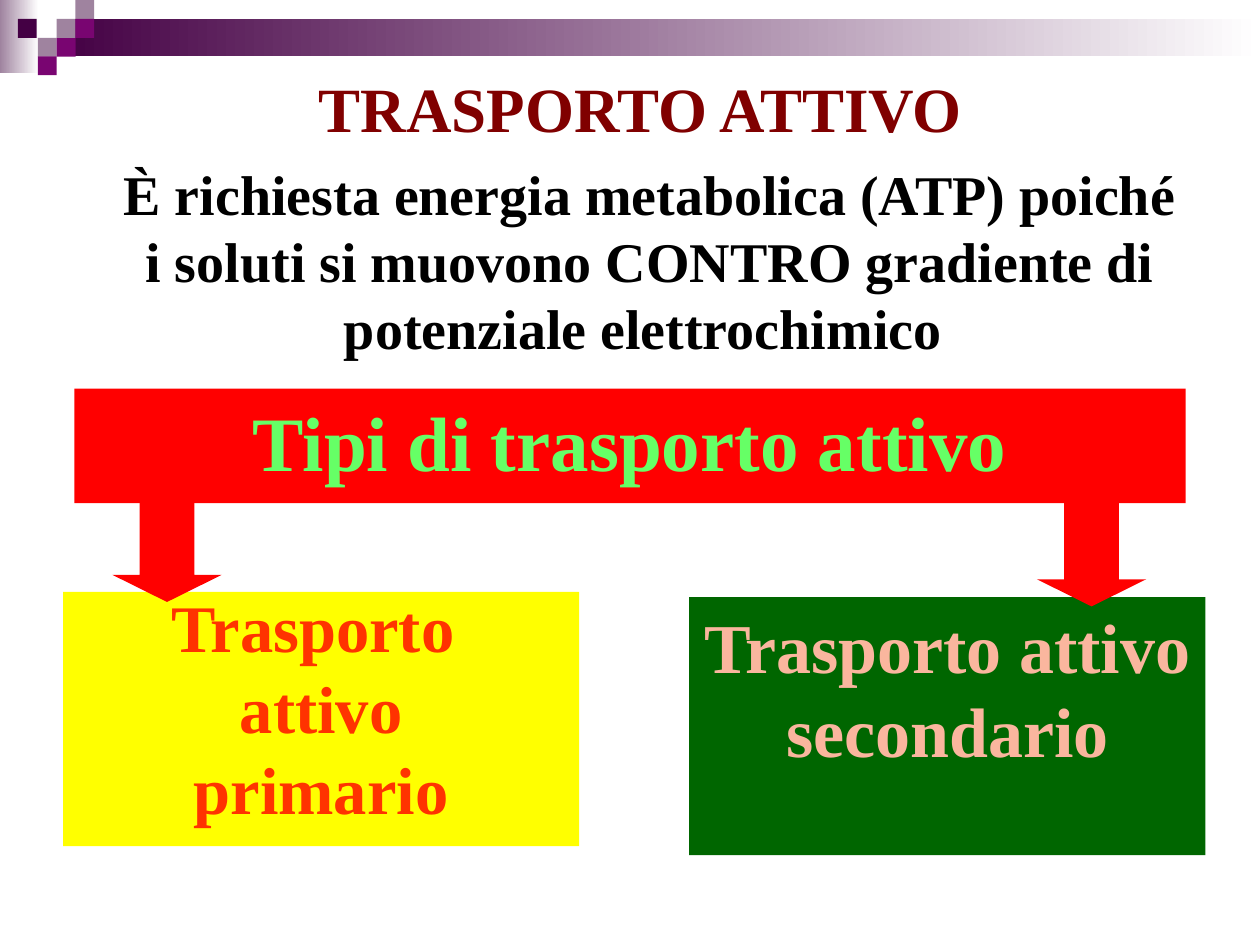
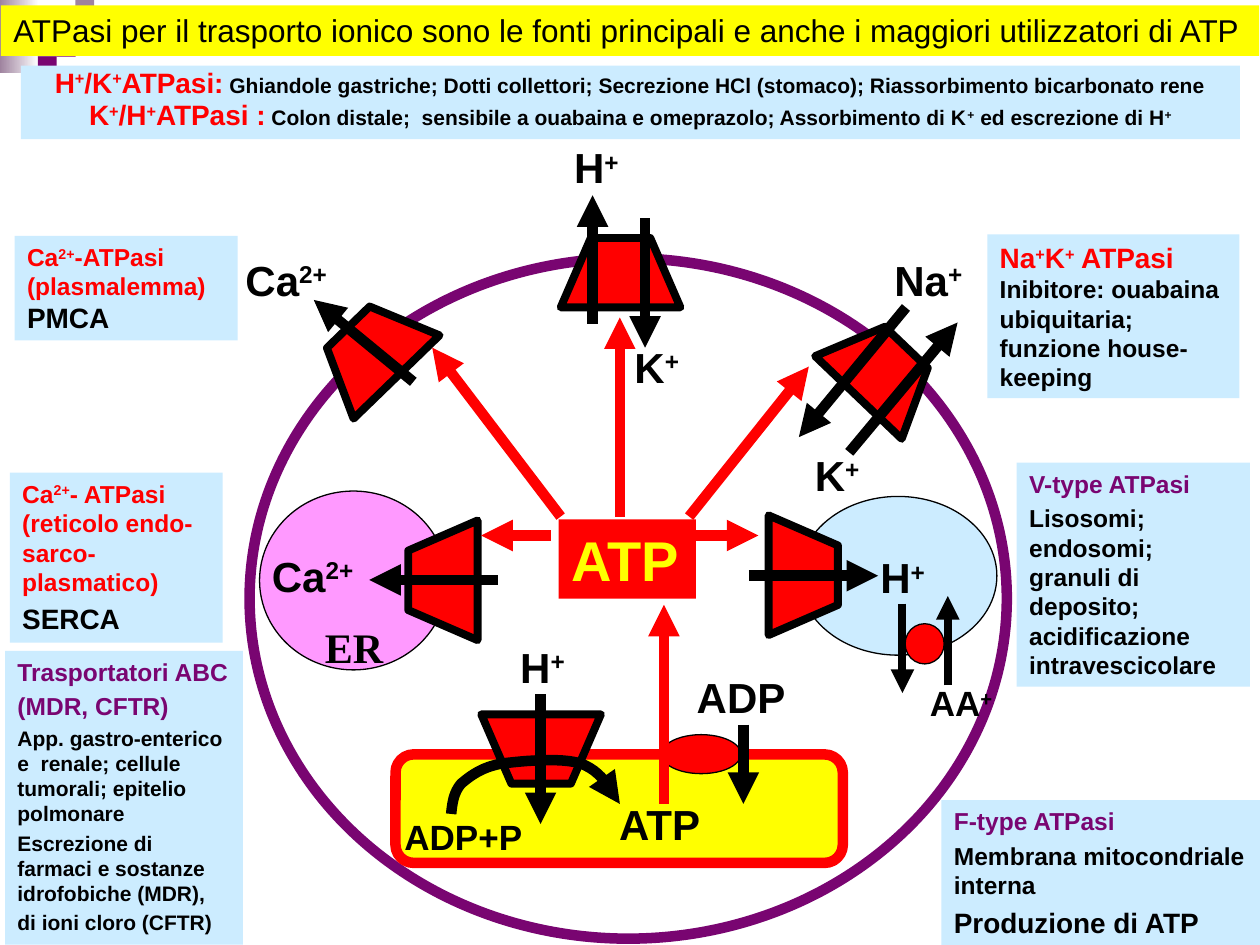
from lxml import etree
from pptx import Presentation
from pptx.dml.color import RGBColor
from pptx.enum.shapes import MSO_CONNECTOR, MSO_SHAPE
from pptx.enum.text import MSO_ANCHOR, PP_ALIGN
from pptx.oxml.ns import qn
from pptx.util import Pt

RECT, OVAL = MSO_SHAPE.RECTANGLE, MSO_SHAPE.OVAL
ROUNDED, DOWN_ARROW = MSO_SHAPE.ROUNDED_RECTANGLE, MSO_SHAPE.DOWN_ARROW
STRAIGHT = MSO_CONNECTOR.STRAIGHT
LEFT, CENTER = PP_ALIGN.LEFT, PP_ALIGN.CENTER
TOP = MSO_ANCHOR.TOP

ARIAL, TIMES = "Arial", "Times New Roman"
BLACK = RGBColor(0x00, 0x00, 0x00)
WHITE = RGBColor(0xFF, 0xFF, 0xFF)
RED = RGBColor(0xFF, 0x00, 0x00)
YELLOW = RGBColor(0xFF, 0xFF, 0x00)
PURPLE = RGBColor(0x79, 0x05, 0x71)
DARK_PURPLE = RGBColor(0x44, 0x00, 0x44)
MAUVE = RGBColor(0x9F, 0x83, 0x9F)
PALE_BLUE = RGBColor(0xCC, 0xEC, 0xFF)
PINK = RGBColor(0xFF, 0x99, 0xFF)
MAROON = RGBColor(0x80, 0x00, 0x00)
LIME = RGBColor(0x66, 0xFF, 0x66)
ORANGE = RGBColor(0xFF, 0x33, 0x00)
GREEN = RGBColor(0x00, 0x66, 0x00)
SALMON = RGBColor(0xFA, 0xB6, 0x9E)

PUMP_WIDTH, PUMP_HEIGHT, PUMP_INSET = 68.4, 39.6, 17.2


def style(shape, fill=None, line=None, weight=0.75):
    shape.shadow.inherit = False
    if fill is None:
        shape.fill.background()
    else:
        shape.fill.solid()
        shape.fill.fore_color.rgb = fill
    if line is None:
        shape.line.fill.background()
    else:
        shape.line.color.rgb = line
        shape.line.width = Pt(weight)
    return shape


def add_block(slide, kind, box, fill=None, line=None, weight=0.75):
    shape = slide.shapes.add_shape(kind, *map(Pt, box))
    return style(shape, fill, line, weight)


def add_fade(slide, box, start):
    """Band that fades from the start colour to white, left to right."""
    band = add_block(slide, RECT, box, start)
    band.fill.gradient()
    band.fill.gradient_angle = 0
    for stop, position, color in zip(band.fill.gradient_stops, (0, 1), (start, WHITE)):
        stop.position = position
        stop.color.rgb = color


def write(shape, paragraphs, font=ARIAL, bold=True, align=LEFT,
          spacing=None, before=0, wrap=True):
    """Fill a shape with paragraphs of (text, size, colour) pieces.

    Text between ^ marks is superscript; before is a share of the text size.
    """
    frame = shape.text_frame
    frame.word_wrap = wrap
    frame.vertical_anchor = TOP
    for index, pieces in enumerate(paragraphs):
        paragraph = frame.add_paragraph() if index else frame.paragraphs[0]
        paragraph.alignment = align
        paragraph.line_spacing = spacing
        paragraph.space_before = Pt(before * pieces[0][1])
        for text, size, color in pieces:
            for order, part in enumerate(text.split("^")):
                if not part:
                    continue
                run = paragraph.add_run()
                run.text = part
                run.font.name = font
                run.font.size = Pt(size)
                run.font.bold = bold
                run.font.color.rgb = color
                if order % 2:
                    run.font._element.set("baseline", "30000")


def add_label(slide, box, text, size=24, color=BLACK, **options):
    label = slide.shapes.add_textbox(*map(Pt, box))
    write(label, [[(text, size, color)]], **options)


def add_note(slide, box, paragraphs, **options):
    write(add_block(slide, RECT, box, PALE_BLUE), paragraphs, **options)


def add_arrowhead(shape):
    line = shape._element.spPr.find(qn("a:ln"))
    etree.SubElement(line, qn("a:tailEnd"), type="triangle")


def add_arrow(slide, start, end, color=BLACK, weight=6):
    arrow = slide.shapes.add_connector(STRAIGHT, *map(Pt, start + end))
    arrow.line.color.rgb = color
    arrow.line.width = Pt(weight)
    add_arrowhead(arrow)
    etree.SubElement(arrow._element.spPr, qn("a:effectLst"))


def add_outline(slide, points, close):
    start, *others = [(Pt(x), Pt(y)) for x, y in points]
    builder = slide.shapes.build_freeform(*start)
    builder.add_line_segments(others, close=close)
    return builder.convert_to_shape()


def add_pump(slide, left, top, rotation=0):
    """Trapezoid with its wide side down before rotation."""
    right, bottom = left + PUMP_WIDTH, top + PUMP_HEIGHT
    corners = [(left, bottom), (left + PUMP_INSET, top),
               (right - PUMP_INSET, top), (right, bottom)]
    pump = style(add_outline(slide, corners, True), RED, BLACK, 4.5)
    pump.rotation = rotation


def add_curved_arrow(slide, start, curves, steps=12):
    """Arrow along cubic curves, each given as two controls and an end."""
    points = [start]
    for control_1, control_2, end in curves:
        knots = (points[-1], control_1, control_2, end)
        for step in range(1, steps + 1):
            t = step / steps
            weights = ((1 - t) ** 3, 3 * t * (1 - t) ** 2, 3 * t ** 2 * (1 - t), t ** 3)
            points.append(tuple(sum(w * knot[axis] for w, knot in zip(weights, knots))
                                for axis in (0, 1)))
    add_arrowhead(style(add_outline(slide, points, False), None, BLACK, 6))


def add_decoration(slide):
    """Bands and squares that both slides share."""
    add_fade(slide, (0, 0, 22, 42), MAUVE)
    add_fade(slide, (32.4, 10.8, 687.6, 21.4), DARK_PURPLE)
    add_squares(slide, [(43, 0, MAUVE), (21.6, 21.6, MAUVE),
                        (32.4, 21.6, PURPLE), (21.6, 32.2, PURPLE)])


def add_squares(slide, squares):
    for left, top, color in squares:
        add_block(slide, RECT, (left, top, 10.8, 10.8), color)


def build_transport_types(slide):
    add_decoration(slide)
    add_squares(slide, [(32.4, 10.8, MAUVE), (43, 10.8, PURPLE), (10.2, 10.8, DARK_PURPLE)])
    add_label(slide, (59, 87.6, 625, 122),
              "È richiesta energia metabolica (ATP) poiché i soluti si muovono "
              "CONTRO gradiente di potenziale elettrochimico ",
              32, font=TIMES, align=CENTER)
    heading = add_block(slide, RECT, (42.5, 222, 635, 65.5), RED)
    write(heading, [[("Tipi di trasporto attivo", 44, LIME)]], font=TIMES, align=CENTER)

    primary = add_block(slide, RECT, (36, 338.2, 295, 145.4), YELLOW)
    write(primary, [[(word, 38, ORANGE)] for word in ("Trasporto ", "attivo", "primario")],
          font=TIMES, align=CENTER, spacing=0.85, before=0.2)
    secondary = add_block(slide, RECT, (393.8, 341.2, 295, 147.5), GREEN)
    write(secondary, [[("Trasporto attivo secondario", 40, SALMON)]],
          font=TIMES, align=CENTER, before=0.2)
    for left, top in ((64.2, 282), (592.5, 284.5)):
        arrow = add_block(slide, DOWN_ARROW, (left, top, 62.5, 62), RED)
        arrow.adjustments[0], arrow.adjustments[1] = 0.5, 0.25
    add_label(slide, (108, 36, 516, 42), "TRASPORTO ATTIVO", 36, MAROON,
              font=TIMES, align=CENTER)


def add_ion(slide, left, top, text, size=24, width=64, font=ARIAL):
    add_label(slide, (left, top, width, 36), text, size, font=font, wrap=False)


def add_atp_center(slide):
    atp = add_block(slide, RECT, (319.2, 296.8, 78.5, 45.4), RED)
    write(atp, [[("ATP", 32, YELLOW)]], wrap=False)
    add_block(slide, OVAL, (378, 419.8, 45.4, 22.3), RED, BLACK)
    add_arrow(slide, (379.4, 459.4), (379.4, 345.6), RED)
    add_ion(slide, 391, 380.2, "ADP", width=70)
    add_arrow(slide, (424.8, 414), (424.8, 459.4))
    title = add_block(slide, RECT, (0.5, 3, 719, 29), YELLOW)
    write(title, [[("ATPasi per il trasporto ionico sono le fonti principali e anche "
                    "i maggiori utilizzatori di ATP", 18, BLACK)]], bold=False, wrap=False)


def add_calcium_pumps(slide):
    add_block(slide, OVAL, (148.3, 280.6, 107.3, 102.2), PINK, BLACK)
    add_pump(slide, 218.9, 311.8, 270)
    add_arrow(slide, (284.4, 331.4), (211, 331.4))
    add_ion(slide, 148.3, 311, "Ca^2+^")
    add_arrow(slide, (314.6, 306), (275, 306), RED)
    add_ion(slide, 178.6, 351.4, "ER", width=47.5, font=TIMES)
    add_note(slide, (5.6, 270, 121.7, 97.2), [
        [("Ca^2+^- ATPasi (reticolo endo-sarco-plasmatico)", 14, RED)],
        [("SERCA", 16, BLACK)]], before=0.2)

    add_pump(slide, 178.6, 181.4, 315.9)
    add_arrow(slide, (236.2, 218.2), (179.3, 171.4))
    add_ion(slide, 133.2, 141.8, "Ca^2+^")
    add_arrow(slide, (320.4, 295.2), (247, 198.7), RED)
    add_note(slide, (8.4, 134.8, 127.4, 59.8), [
        [("Ca^2+^-ATPasi (plasmalemma)", 14, RED)], [("PMCA", 16, BLACK)]])


def add_proton_potassium_pump(slide):
    add_ion(slide, 355.5, 191.5, "K^+^", width=41)
    add_pump(slide, 320.4, 136)
    add_arrow(slide, (338.6, 185), (338.6, 111.6))
    add_ion(slide, 321, 77.6, "H^+^", width=41)
    add_arrow(slide, (368.6, 124.6), (368.6, 198.7))
    add_arrow(slide, (354.2, 295.2), (354.2, 181.4), RED)
    add_note(slide, (12, 37.5, 696.5, 42), [
        [("H^+^/K^+^ATPasi:", 16, RED),
         (" Ghiandole gastriche; Dotti collettori; Secrezione HCl (stomaco); "
          "Riassorbimento bicarbonato rene", 12, BLACK)],
        [("K^+^/H^+^ATPasi :", 16, RED),
         (" Colon distale;  sensibile a ouabaina e omeprazolo; "
          "Assorbimento di K^+^ ed escrezione di H^+^", 12, BLACK)]],
        align=CENTER, spacing=0.8, before=0.2)


def add_sodium_potassium_pump(slide):
    add_pump(slide, 470, 193, 43.7)
    add_arrow(slide, (517.7, 175.7), (456.5, 249.8))
    add_ion(slide, 458.6, 253.4, "K^+^", width=41)
    add_ion(slide, 504, 141.8, "Na^+^", width=54.7)
    add_arrow(slide, (485.3, 258.5), (547.2, 184.3))
    add_arrow(slide, (393.8, 295.2), (462.2, 209.5), RED)
    add_note(slide, (564.2, 134, 144, 93.6), [
        [("Na^+^K^+^ ATPasi", 16, RED)],
        [("Inibitore: ouabaina", 14, BLACK)],
        [("ubiquitaria;", 14, BLACK)],
        [("funzione house-keeping", 14, BLACK)]])


def add_v_type_pump(slide):
    add_arrow(slide, (393.8, 306), (433.4, 306), RED)
    add_block(slide, OVAL, (456.7, 283.7, 113, 90.7), PALE_BLUE, BLACK)
    add_pump(slide, 424.8, 308.9, 90)
    add_arrow(slide, (428, 329), (501.8, 329))
    add_ion(slide, 496, 311.8, "H^+^", width=41)
    add_block(slide, OVAL, (517.2, 356.4, 22.3, 23), RED, BLACK)
    add_arrow(slide, (515.7, 344.9), (515.7, 396), weight=4.5)
    add_arrow(slide, (541.6, 391.7), (541.6, 340.6), weight=4.5)
    add_ion(slide, 524.2, 386, "AA^+^", 20, 51)
    add_note(slide, (581, 264.4, 133.2, 128), [
        [("V-type ATPasi", 14, PURPLE)],
        [("Lisosomi; endosomi; granuli di deposito; acidificazione intravescicolare",
          14, BLACK)]], before=0.2)


def add_f_type_pump(slide):
    add_ion(slide, 346.8, 452.9, "ATP")
    add_pump(slide, 275, 408.2, 180)
    add_arrow(slide, (308.9, 396.7), (308.9, 470.9))
    add_ion(slide, 290.2, 362.9, "H^+^", width=41)
    add_label(slide, (219.4, 469.2, 90.7, 23.8), "ADP+P", 20, align=CENTER, spacing=0.7)
    add_curved_arrow(slide, (257.8, 465.1), [
        ((258.5, 458.6), (259.2, 452.9), (263.5, 447.8)),
        ((268.6, 443.5), (275, 438.5), (286.6, 436.3)),
        ((298.1, 434.9), (320.4, 432.7), (331.9, 436.3)),
        ((343.4, 440.6), (348.5, 450), (354.2, 459.4))])
    add_note(slide, (538, 457.2, 182, 84), [
        [("F-type ATPasi", 14, PURPLE)],
        [("Membrana mitocondriale interna", 14, BLACK)],
        [("Produzione di ATP", 16, BLACK)]], before=0.2)


def build_ion_pumps(slide):
    add_decoration(slide)
    add_block(slide, OVAL, (142.6, 147.6, 432.7, 388.8), None, PURPLE, 6)
    add_block(slide, ROUNDED, (226, 431.1, 255.6, 62), YELLOW, RED, 6)
    add_atp_center(slide)
    add_calcium_pumps(slide)
    add_proton_potassium_pump(slide)
    add_sodium_potassium_pump(slide)
    add_v_type_pump(slide)
    add_f_type_pump(slide)
    add_note(slide, (2.9, 372, 136, 167.8), [
        [("Trasportatori ABC", 14, PURPLE)],
        [("(MDR, CFTR)", 14, PURPLE)],
        [("App. gastro-enterico e  renale; cellule tumorali; epitelio polmonare", 12, BLACK)],
        [("Escrezione di farmaci e sostanze idrofobiche (MDR),", 12, BLACK)],
        [("di ioni cloro (CFTR)", 12, BLACK)]], before=0.2)


def main():
    deck = Presentation()
    deck.slide_width, deck.slide_height = Pt(720), Pt(540)
    blank = deck.slide_layouts[6]
    for build in (build_transport_types, build_ion_pumps):
        build(deck.slides.add_slide(blank))
    deck.save("out.pptx")


if __name__ == "__main__":
    main()
